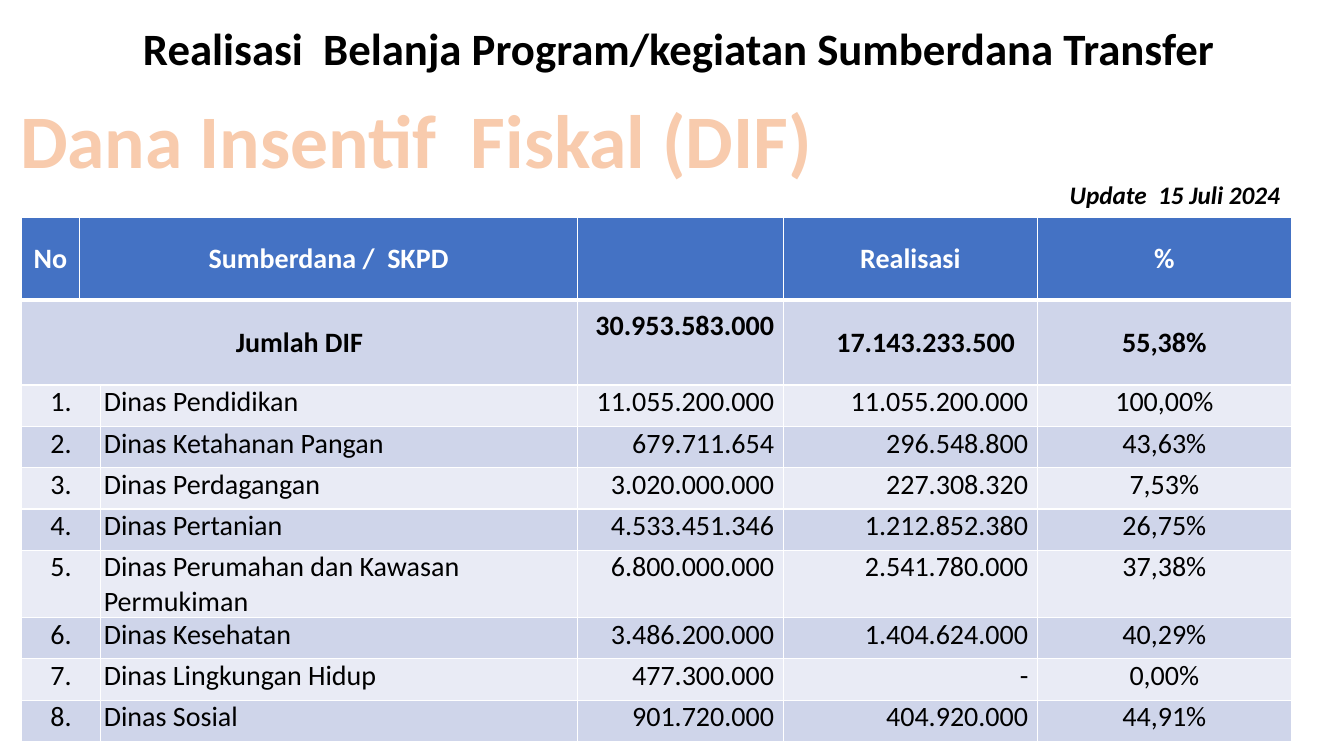
from dataclasses import dataclass

from lxml.etree import SubElement
from pptx import Presentation
from pptx.dml.color import RGBColor
from pptx.enum.text import MSO_ANCHOR, PP_ALIGN
from pptx.oxml import parse_xml
from pptx.oxml.ns import nsdecls, qn
from pptx.util import Inches, Pt


@dataclass(frozen=True)
class Theme:
    font: str = "Calibri"
    black: str = "000000"
    white: str = "FFFFFF"
    header: str = "4472C4"
    band_dark: str = "CFD5EA"
    band_light: str = "E9EBF5"
    peach: str = "F8CBAD"
    orange: str = "ED7D31"
    title_size: int = 32
    heading_size: int = 54
    note_size: int = 18
    table_size: int = 20


THEME = Theme()
LEFT, CENTER, RIGHT = PP_ALIGN.LEFT, PP_ALIGN.CENTER, PP_ALIGN.RIGHT
COLUMN_WIDTHS = (0.58, 0.21, 4.73, 2.04, 2.52, 2.52)
HEADER_HEIGHT, TOTAL_HEIGHT, ROW_HEIGHT = 0.82, 0.84, 0.41
HEADERS = {0: "No", 1: "Sumberdana /  SKPD", 3: "", 4: "Realisasi", 5: "%"}
AGENCIES = (
    ("Dinas Pendidikan", "11.055.200.000", "11.055.200.000", "100,00%"),
    ("Dinas Ketahanan Pangan", "679.711.654", "296.548.800", "43,63%"),
    ("Dinas Perdagangan", "3.020.000.000", "227.308.320", "7,53%"),
    ("Dinas Pertanian", "4.533.451.346", "1.212.852.380", "26,75%"),
    ("Dinas Perumahan dan Kawasan Permukiman", "6.800.000.000",
     "2.541.780.000", "37,38%"),
    ("Dinas Kesehatan", "3.486.200.000", "1.404.624.000", "40,29%"),
    ("Dinas Lingkungan Hidup", "477.300.000", "-", "0,00%"),
    ("Dinas Sosial", "901.720.000", "404.920.000", "44,91%"),
)


def write(tf, text, size, color, align=LEFT, **font):
    p = tf.paragraphs[0]
    p.alignment = align
    r = p.add_run()
    r.text = text
    formats = {"name": THEME.font, "size": Pt(size), **font}
    for name, value in formats.items():
        setattr(r.font, name, value)
    r.font.color.rgb = RGBColor.from_string(color)
    return r


def add_text(slide, box, text, size, color, wrap=False, anchor=MSO_ANCHOR.TOP, **style):
    tf = slide.shapes.add_textbox(*map(Inches, box)).text_frame
    tf.word_wrap = wrap
    tf.vertical_anchor = anchor
    return write(tf, text, size, color, bold=True, **style)


def outline_text(r, color, width):
    ln = parse_xml(f'<a:ln {nsdecls("a")} w="{Pt(width)}"><a:solidFill>'
                   f'<a:srgbClr val="{color}"/></a:solidFill></a:ln>')
    r.font._element.insert(0, ln)


def set_borders(cell, **widths):
    """Draw white borders; widths are points by side, 1 where not given."""
    tc_pr = cell._tc.get_or_add_tcPr()
    for index, side in enumerate("LRTB"):
        ln = SubElement(tc_pr, qn(f"a:ln{side}"), w=str(Pt(widths.get(side, 1))))
        fill = SubElement(ln, qn("a:solidFill"))
        SubElement(fill, qn("a:srgbClr"), val=THEME.white)
        tc_pr.insert(index, ln)


def fill_cell(cell, text, align, color=THEME.black, bold=False,
              anchor=MSO_ANCHOR.TOP, insets=(0.03, 0, 0.03, 0)):
    cell.vertical_anchor = anchor
    sides = ("left", "top", "right", "bottom")
    for side, inset in zip(sides, insets):
        setattr(cell, f"margin_{side}", Inches(inset))
    write(cell.text_frame, text, THEME.table_size, color, align, bold=bold)


def style_grid(table):
    for i, row in enumerate(table.rows):
        band = THEME.band_dark if i % 2 else THEME.band_light
        for cell in row.cells:
            cell.fill.solid()
            cell.fill.fore_color.rgb = RGBColor.from_string(band if i else THEME.header)
            set_borders(cell, T=3 if i == 1 else 1, B=1 if i else 3)


def fill_header(table):
    table.cell(0, 1).merge(table.cell(0, 2))
    for column, text in HEADERS.items():
        fill_cell(table.cell(0, column), text, CENTER, THEME.white, True,
                  MSO_ANCHOR.MIDDLE, (0.1, 0.05, 0.1, 0.05))


def fill_total(table):
    table.cell(1, 0).merge(table.cell(1, 2))
    totals = (
        (0, "Jumlah DIF", CENTER, (0.03, 0, 0.03, 0)),
        (3, "30.953.583.000", RIGHT, (0.03, 0, 0.09, 0.34)),
        (4, "17.143.233.500", RIGHT, (0.03, 0, 0.22, 0)),
        (5, "55,38%", CENTER, (0.03, 0, 0.03, 0)),
    )
    for column, text, align, insets in totals:
        fill_cell(table.cell(1, column), text, align, bold=True,
                  anchor=MSO_ANCHOR.MIDDLE, insets=insets)


def fill_agencies(table):
    for number, (agency, budget, spent, percent) in enumerate(AGENCIES, 1):
        row = number + 1
        table.cell(row, 0).merge(table.cell(row, 1))
        fill_cell(table.cell(row, 0), f"{number}.", CENTER)
        fill_cell(table.cell(row, 2), agency, LEFT)
        for column, amount in ((3, budget), (4, spent)):
            fill_cell(table.cell(row, column), amount, RIGHT, insets=(0.03, 0, 0.09, 0))
        fill_cell(table.cell(row, 5), percent, CENTER)


def add_spending_table(slide):
    heights = [HEADER_HEIGHT, TOTAL_HEIGHT] + [ROW_HEIGHT] * len(AGENCIES)
    box = (0.21, 2.16, sum(COLUMN_WIDTHS), sum(heights))
    table = slide.shapes.add_table(
        len(heights), len(COLUMN_WIDTHS), *map(Inches, box)).table
    for column, width in zip(table.columns, COLUMN_WIDTHS):
        column.width = Inches(width)
    for row, height in zip(table.rows, heights):
        row.height = Inches(height)
    style_grid(table)
    fill_header(table)
    fill_total(table)
    fill_agencies(table)


def main():
    prs = Presentation()
    prs.slide_width, prs.slide_height = Inches(13.33), Inches(7.5)
    slide = prs.slides.add_slide(prs.slide_layouts[6])
    title = add_text(slide, (1.32, 0, 11.5, 1.01),
                     "Realisasi  Belanja Program/kegiatan Sumberdana Transfer",
                     THEME.title_size, THEME.black, wrap=True, anchor=MSO_ANCHOR.MIDDLE)
    title._parent.line_spacing = 0.9
    add_spending_table(slide)
    add_text(slide, (10.51, 1.73, 2.31, 0.4), "Update  15 Juli 2024",
             THEME.note_size, THEME.black, italic=True)
    heading = add_text(slide, (0.06, 0.87, 8.14, 1.01), "Dana Insentif  Fiskal (DIF)",
                       THEME.heading_size, THEME.peach, align=CENTER)
    outline_text(heading, THEME.orange, 1.75)
    prs.save("out.pptx")


if __name__ == "__main__":
    main()
